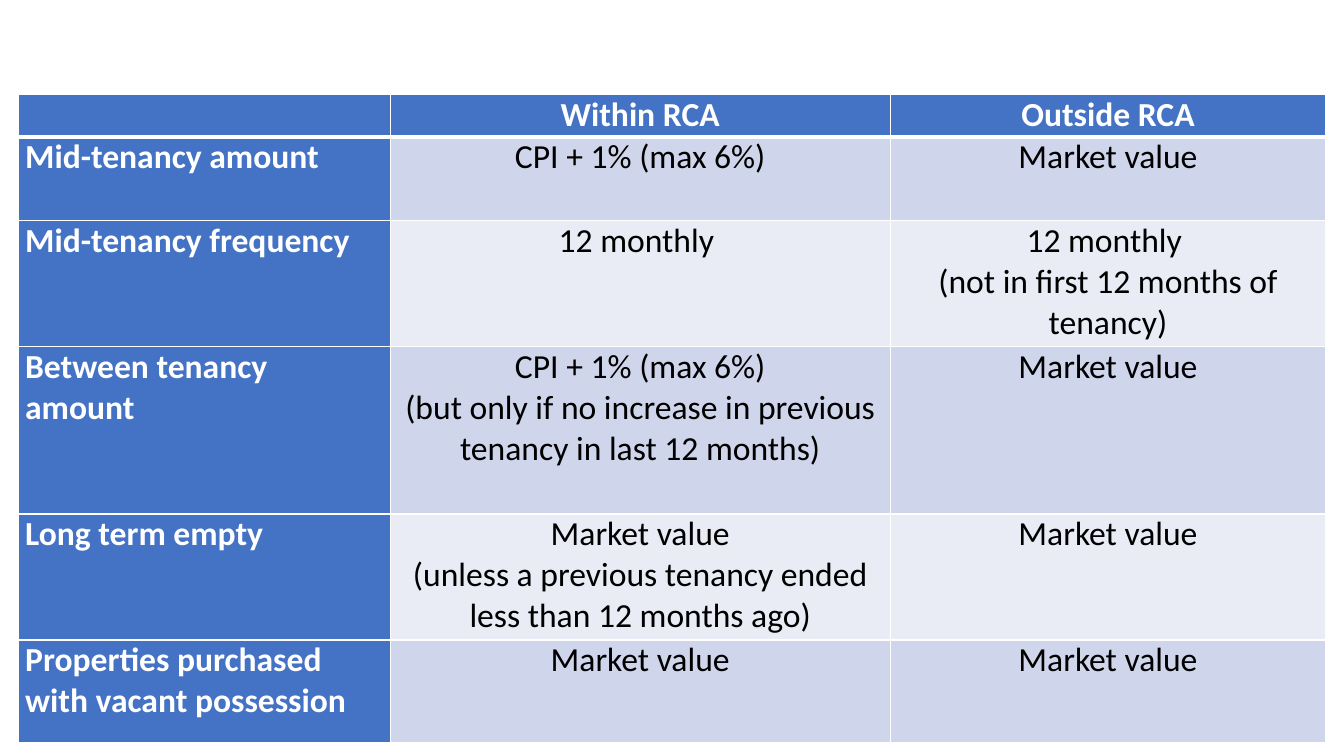
from lxml.etree import SubElement
from pptx import Presentation
from pptx.dml.color import RGBColor
from pptx.enum.text import MSO_ANCHOR, PP_ALIGN
from pptx.oxml.ns import qn
from pptx.util import Inches, Pt

COLORS = {
    "heading": "4472C4",
    "odd_row": "CFD5EA",
    "even_row": "E9EBF5",
    "border": "FFFFFF",
    "heading_text": "FFFFFF",
    "body_text": "000000",
}
FONT = "Calibri"
COLUMN_WIDTHS = [3.69, 4.96, 4.32]
ROW_HEIGHTS = [0.42, 0.83, 1.25, 1.66, 1.25, 1.02]
RENT_RULES = [
    ["", "Within RCA", "Outside RCA"],
    ["Mid-tenancy amount", "CPI + 1% (max 6%)", "Market value"],
    ["Mid-tenancy frequency", "12 monthly ",
     "12 monthly \n(not in first 12 months of tenancy)"],
    ["Between tenancy amount",
     "CPI + 1% (max 6%)\n(but only if no increase in previous tenancy in last 12 months)",
     "Market value"],
    ["Long term empty",
     "Market value\n(unless a previous tenancy ended less than 12 months ago)",
     "Market value"],
    ["Properties purchased with vacant possession", "Market value", "Market value"],
]


def rgb(name):
    return RGBColor.from_string(COLORS[name])


def set_borders(cell, row_index):
    properties = cell._tc.get_or_add_tcPr()
    widths = {
        "lnL": 1,
        "lnR": 1,
        "lnT": 3 if row_index == 1 else 1,
        "lnB": 3 if row_index == 0 else 1,
    }
    for side, width in widths.items():
        line = SubElement(properties, qn(f"a:{side}"), w=str(Pt(width)))
        fill = SubElement(line, qn("a:solidFill"))
        SubElement(fill, qn("a:srgbClr"), val=COLORS["border"])


def fill_cell(cell, text, row_index, column_index):
    is_heading = row_index == 0 or column_index == 0
    stripe = "odd_row" if row_index % 2 else "even_row"
    set_borders(cell, row_index)
    cell.fill.solid()
    cell.fill.fore_color.rgb = rgb("heading" if is_heading else stripe)
    cell.margin_left = cell.margin_right = Inches(0.07)
    cell.margin_top = cell.margin_bottom = 0
    cell.vertical_anchor = MSO_ANCHOR.TOP
    cell.text = text
    for para in cell.text_frame.paragraphs:
        para.alignment = PP_ALIGN.CENTER if column_index else PP_ALIGN.LEFT
        para.font.name = FONT
        para.font.size = Pt(24)
        para.font.bold = is_heading
        para.font.color.rgb = rgb("heading_text" if is_heading else "body_text")


def add_rent_table(page):
    frame = page.shapes.add_table(
        len(ROW_HEIGHTS), len(COLUMN_WIDTHS), Inches(0.18), Inches(0.94),
        Inches(sum(COLUMN_WIDTHS)), Inches(sum(ROW_HEIGHTS)))
    table = frame.table
    table.first_col = True
    for column, width in zip(table.columns, COLUMN_WIDTHS):
        column.width = Inches(width)
    for row, height in zip(table.rows, ROW_HEIGHTS):
        row.height = Inches(height)
    for row_index, texts in enumerate(RENT_RULES):
        for column_index, text in enumerate(texts):
            fill_cell(table.cell(row_index, column_index), text, row_index, column_index)


def main():
    deck = Presentation()
    deck.slide_width = Inches(13.33)
    deck.slide_height = Inches(7.5)
    page = deck.slides.add_slide(deck.slide_layouts[6])
    add_rent_table(page)
    deck.save("out.pptx")


if __name__ == "__main__":
    main()
